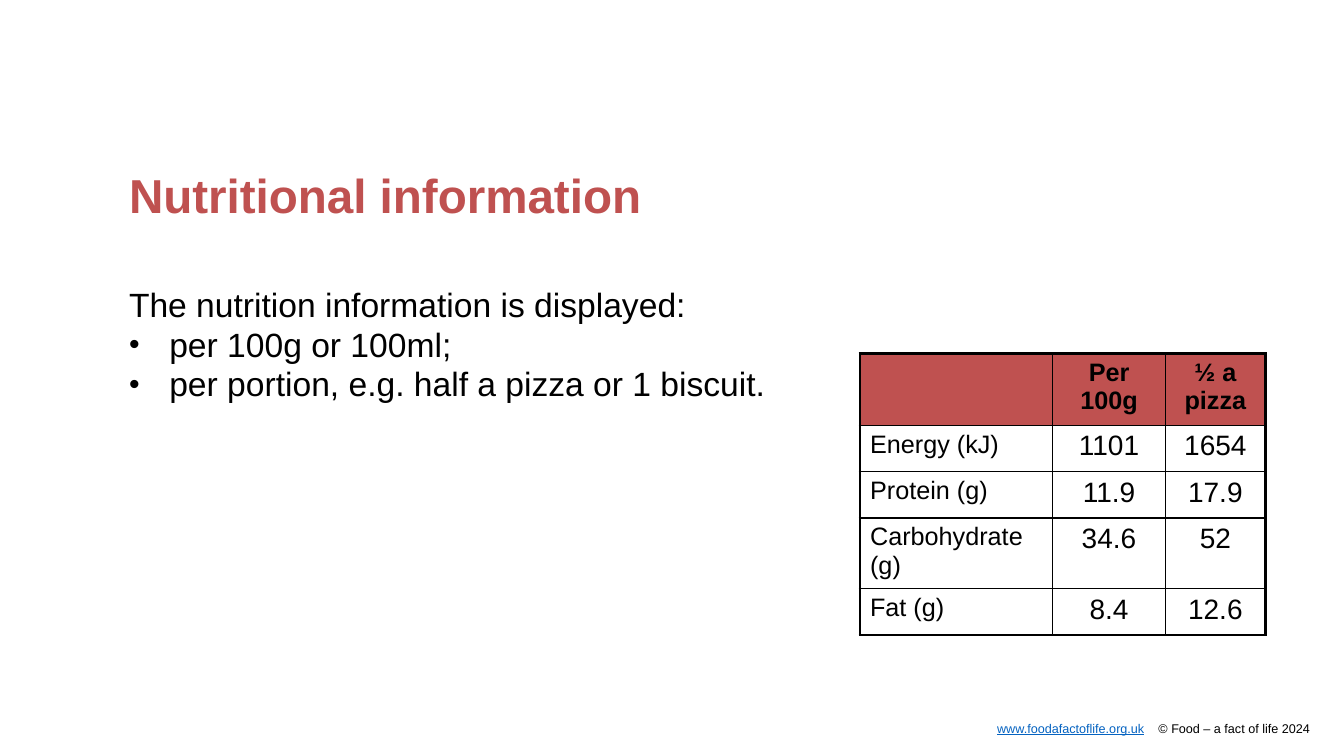
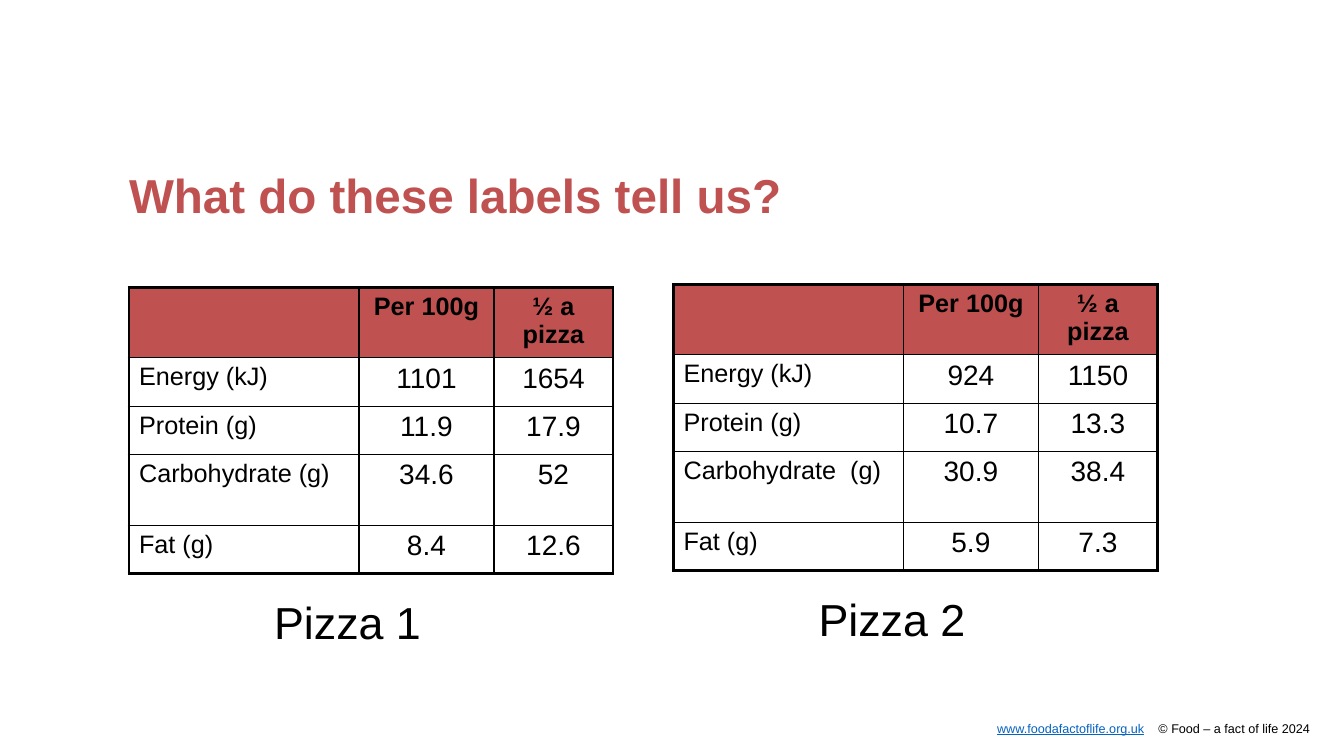
"""Build two slides about nutrition information on food labels."""
from dataclasses import dataclass
from typing import Any, Optional

import lxml.etree
import pptx
import pptx.dml.color
import pptx.enum.text
import pptx.oxml.ns
import pptx.util

RED = pptx.dml.color.RGBColor(0xBF, 0x51, 0x50)
BLACK = pptx.dml.color.RGBColor(0x00, 0x00, 0x00)
LINK_BLUE = pptx.dml.color.RGBColor(0x05, 0x63, 0xC1)
FONT = "Arial"
CENTER = pptx.enum.text.PP_ALIGN.CENTER
LEFT = pptx.enum.text.PP_ALIGN.LEFT
MARGIN = 1.28
CONTENT_WIDTH = 10.63
OUTER_BORDER = 2.25
INNER_BORDER = 1
HEADINGS = ("", "Per 100g", "½ a pizza")
PIZZA_1 = (
    ("Energy (kJ)", "1101", "1654"),
    ("Protein (g)", "11.9", "17.9"),
    ("Carbohydrate (g)", "34.6", "52"),
    ("Fat (g)", "8.4", "12.6"),
)
PIZZA_2 = (
    ("Energy (kJ)", "924", "1150"),
    ("Protein (g)", "10.7", "13.3"),
    ("Carbohydrate  (g)", "30.9", "38.4"),
    ("Fat (g)", "5.9", "7.3"),
)
WIDE_COLUMNS = (2.28, 1.34, 1.18)
WIDE_ROWS = (0.7, 0.48, 0.48, 0.7, 0.48)


@dataclass(frozen=True)
class NutritionLabel:
    """A nutrition table with its place, sizes and optional caption."""

    left: float
    top: float
    columns: tuple[float, ...]
    rows: tuple[float, ...]
    nutrients: tuple[tuple[str, str, str], ...]
    caption: Optional[str] = None


SMALL_LABEL = NutritionLabel(
    8.53, 3.51, (1.91, 1.12, 0.99), (0.71, 0.46, 0.46, 0.7, 0.46), PIZZA_1
)
COMPARED_LABELS = (
    NutritionLabel(MARGIN, 2.85, WIDE_COLUMNS, WIDE_ROWS, PIZZA_1, "Pizza 1"),
    NutritionLabel(6.68, 2.82, WIDE_COLUMNS, WIDE_ROWS, PIZZA_2, "Pizza 2"),
)


def write(
    paragraph: Any,
    text: str,
    *,
    size: float,
    color: pptx.dml.color.RGBColor = BLACK,
    bold: bool = False,
    underline: bool = False,
    align: Any = LEFT,
    line_spacing: float = 1.0,
    space_before: float = 0,
) -> None:
    """Add formatted text to a paragraph."""
    paragraph.alignment = align
    paragraph.line_spacing = line_spacing
    paragraph.space_before = pptx.util.Pt(space_before)
    run = paragraph.add_run()
    run.text = text
    run.font.name = FONT
    run.font.size = pptx.util.Pt(size)
    run.font.color.rgb = color
    run.font.bold = bold
    run.font.underline = underline


def add_element(parent: Any, tag: str, **attributes: str) -> Any:
    """Append a DrawingML element to a parent element."""
    return lxml.etree.SubElement(parent, pptx.oxml.ns.qn(tag), attributes)


def prepare_frame(frame: Any, inset: bool = False) -> None:
    """Make a text frame wrap from its top, with or without insets."""
    frame.word_wrap = True
    frame.auto_size = pptx.enum.text.MSO_AUTO_SIZE.NONE
    frame.vertical_anchor = pptx.enum.text.MSO_ANCHOR.TOP
    if not inset:
        frame.margin_left = frame.margin_right = 0
        frame.margin_top = frame.margin_bottom = 0


def add_text_frame(
    slide: Any, left: float, top: float, width: float, height: float,
    inset: bool = False,
) -> Any:
    """Add a text box and return its frame."""
    box = slide.shapes.add_textbox(
        *(pptx.util.Inches(length) for length in (left, top, width, height))
    )
    prepare_frame(box.text_frame, inset)
    return box.text_frame


def add_footer(slide: Any) -> None:
    """Add the web address and the copyright line."""
    paragraph = add_text_frame(slide, 9.89, 7.15, 3.4, 0.15).paragraphs[0]
    tabs = add_element(paragraph._p.get_or_add_pPr(), "a:tabLst")
    add_element(tabs, "a:tab", pos=str(pptx.util.Inches(1.6)), algn="l")
    write(paragraph, "www.foodafactoflife.org.uk", size=9, color=LINK_BLUE,
          underline=True)
    write(paragraph, "\t© Food – a fact of life 2024", size=9)


def add_titled_slide(presentation: Any, heading: str) -> Any:
    """Add a slide with the shared title style and footer."""
    slide = presentation.slides.add_slide(presentation.slide_layouts[5])
    title = slide.shapes.title
    title.left, title.top = pptx.util.Inches(MARGIN), pptx.util.Inches(1.71)
    title.width = pptx.util.Inches(CONTENT_WIDTH)
    title.height = pptx.util.Inches(0.79)
    prepare_frame(title.text_frame)
    write(title.text_frame.paragraphs[0], heading, size=34, color=RED,
          bold=True, line_spacing=0.9)
    add_footer(slide)
    return slide


def add_introduction(slide: Any, lead: str, points: tuple[str, ...]) -> None:
    """Add a lead sentence followed by bullet points."""
    frame = add_text_frame(slide, MARGIN, 2.86, CONTENT_WIDTH, 3.89)
    write(frame.paragraphs[0], lead, size=24, line_spacing=0.9)
    indent = pptx.util.Inches(0.4)
    for point in points:
        paragraph = frame.add_paragraph()
        properties = paragraph._p.get_or_add_pPr()
        properties.set("marL", str(indent))
        properties.set("indent", str(-indent))
        add_element(properties, "a:buSzPct", val="90000")
        add_element(properties, "a:buFont", typeface=FONT)
        add_element(properties, "a:buChar", char="•")
        write(paragraph, point, size=24, line_spacing=0.9, space_before=2.5)


def add_borders(cell: Any, outer_edges: dict[str, bool]) -> None:
    """Draw the four cell borders, thicker on outer edges."""
    properties = cell._tc.get_or_add_tcPr()
    for edge, is_outer in outer_edges.items():
        width = pptx.util.Pt(OUTER_BORDER if is_outer else INNER_BORDER)
        line = add_element(properties, f"a:ln{edge}", w=str(width))
        fill = add_element(line, "a:solidFill")
        add_element(fill, "a:srgbClr", val=str(BLACK))


def add_label(slide: Any, label: NutritionLabel) -> None:
    """Draw a nutrition table and its caption."""
    last_row, last_column = len(label.rows) - 1, len(label.columns) - 1
    table = slide.shapes.add_table(
        len(label.rows), len(label.columns),
        pptx.util.Inches(label.left), pptx.util.Inches(label.top),
        pptx.util.Inches(sum(label.columns)), pptx.util.Inches(sum(label.rows)),
    ).table
    table.first_row = table.horz_banding = False
    for column, width in zip(table.columns, label.columns):
        column.width = pptx.util.Inches(width)
    for row, height in zip(table.rows, label.rows):
        row.height = pptx.util.Inches(height)
    for r, values in enumerate((HEADINGS, *label.nutrients)):
        for c, value in enumerate(values):
            cell = table.cell(r, c)
            add_borders(cell, {"L": c == 0, "R": c == last_column,
                               "T": r == 0, "B": r == last_row})
            if r == 0:
                cell.fill.solid()
                cell.fill.fore_color.rgb = RED
            else:
                cell.fill.background()
            if value:
                write(cell.text_frame.paragraphs[0], value,
                      size=20 if r and c else 18, bold=r == 0,
                      align=CENTER if c else LEFT)
    if label.caption:
        frame = add_text_frame(slide, label.left + 1.34, label.top + 3,
                               1.73, 0.63, inset=True)
        write(frame.paragraphs[0], label.caption, size=32)


def main() -> None:
    """Build and save the presentation."""
    presentation = pptx.Presentation()
    presentation.slide_width = pptx.util.Inches(13.33)
    presentation.slide_height = pptx.util.Inches(7.5)

    information = add_titled_slide(presentation, "Nutritional information")
    add_introduction(
        information,
        "The nutrition information is displayed:",
        ("per 100g or 100ml;", "per portion, e.g. half a pizza or 1 biscuit."),
    )
    add_label(information, SMALL_LABEL)

    comparison = add_titled_slide(presentation, "What do these labels tell us?")
    for label in COMPARED_LABELS:
        add_label(comparison, label)

    presentation.save("out.pptx")


if __name__ == "__main__":
    main()
